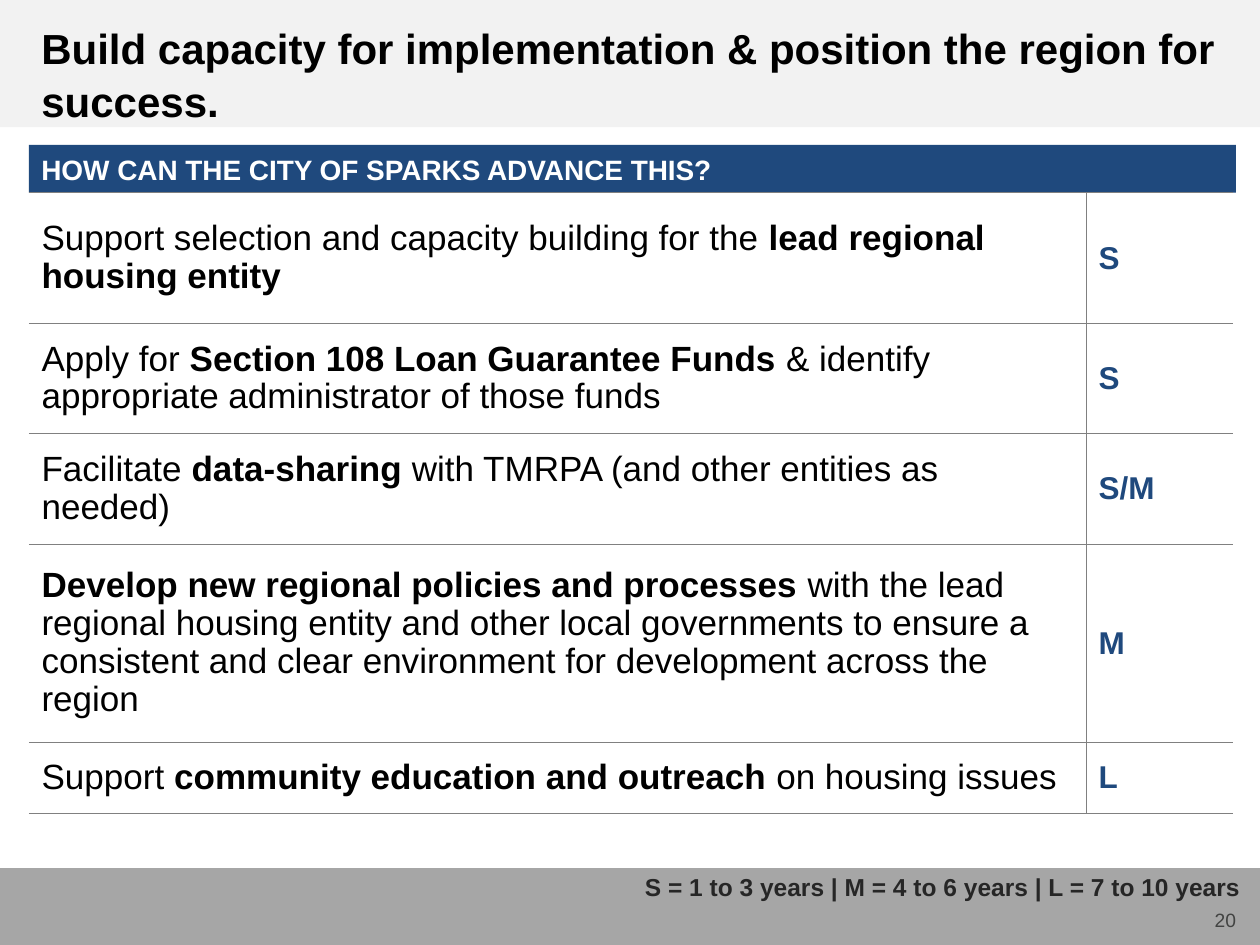
import pptx
import pptx.dml.color
import pptx.enum.shapes
import pptx.enum.text
import pptx.oxml
import pptx.oxml.ns
import pptx.util
from pptx.util import Inches

FONT = "Arial"
NAVY, BLACK, WHITE, RULE = "1F497D", "000000", "FFFFFF", "808080"
ANCHOR = pptx.enum.text.MSO_ANCHOR
ALIGN = pptx.enum.text.PP_ALIGN

COLUMN_WIDTHS = [8.39, 1.17]
# Row height, action as (text, bold) runs, time frame
ACTIONS = [
    (1.04, [("Support selection and capacity building for the ", False),
            ("lead regional housing entity", True)], "S"),
    (0.87, [("Apply for ", False), ("Section 108 Loan Guarantee Funds ", True),
            ("& identify appropriate administrator of those funds", False)], "S"),
    (0.88, [("Facilitate ", False), ("data-sharing", True),
            (" with TMRPA (and other entities as needed)", False)], "S/M"),
    (1.57, [("Develop new regional policies and processes ", True),
            ("with the lead regional housing entity and other local governments "
             "to ensure a consistent and clear environment for development "
             "across the region", False)], "M"),
    (0.57, [("Support ", False), ("community education and outreach ", True),
            ("on housing issues", False)], "L"),
]


def rgb(value):
    return pptx.dml.color.RGBColor.from_string(value)


def write_text(frame, runs, size, color, bold=True, align=ALIGN.LEFT, spacing=1.05):
    """Write a string, or a list of (text, bold) runs, as one paragraph."""
    if isinstance(runs, str):
        runs = [(runs, bold)]
    frame.word_wrap = True
    paragraph = frame.paragraphs[0]
    paragraph.alignment = align
    paragraph.line_spacing = spacing
    for text, is_bold in runs:
        run = paragraph.add_run()
        run.text = text
        run.font.name = FONT
        run.font.size = pptx.util.Pt(size)
        run.font.bold = is_bold
        run.font.color.rgb = rgb(color)


def add_band(slide, left, top, width, height, fill):
    shape = slide.shapes.add_shape(
        pptx.enum.shapes.MSO_SHAPE.RECTANGLE,
        Inches(left), Inches(top), Inches(width), Inches(height))
    shape.shadow.inherit = False
    shape.fill.solid()
    shape.fill.fore_color.rgb = rgb(fill)
    shape.line.fill.background()
    return shape


def add_text(slide, left, top, width, height, text, **text_format):
    box = slide.shapes.add_textbox(
        Inches(left), Inches(top), Inches(width), Inches(height))
    write_text(box.text_frame, text, **text_format)
    return box


def set_borders(cell, ruled_sides):
    """Rule the named sides and clear the others."""
    properties = cell._tc.get_or_add_tcPr()
    namespace = pptx.oxml.ns.nsdecls("a")
    for index, side in enumerate("LRTB"):
        if side in ruled_sides:
            fill = f'<a:solidFill><a:srgbClr val="{RULE}"/></a:solidFill>'
        else:
            fill = "<a:noFill/>"
        border = pptx.oxml.parse_xml(
            f'<a:ln{side} {namespace} w="6350">{fill}</a:ln{side}>')
        properties.insert(index, border)


def add_action_table(slide, left, top):
    heights = [height for height, _, _ in ACTIONS]
    frame = slide.shapes.add_table(
        len(ACTIONS), len(COLUMN_WIDTHS), Inches(left), Inches(top),
        Inches(sum(COLUMN_WIDTHS)), Inches(sum(heights)))
    table = frame.table
    table.first_row = False
    table.horz_banding = False
    for column, width in zip(table.columns, COLUMN_WIDTHS):
        column.width = Inches(width)
    for row, (height, action, time_frame) in zip(table.rows, ACTIONS):
        row.height = Inches(height)
        action_cell, time_cell = row.cells
        write_text(action_cell.text_frame, action, size=20, color=BLACK, spacing=0.97)
        write_text(time_cell.text_frame, time_frame, size=18, color=NAVY, spacing=1.0)
        for cell, sides in ((action_cell, "RTB"), (time_cell, "LTB")):
            cell.vertical_anchor = ANCHOR.MIDDLE
            cell.fill.background()
            set_borders(cell, sides)


def main():
    presentation = pptx.Presentation()
    presentation.slide_width = Inches(10)
    presentation.slide_height = Inches(7.5)
    slide = presentation.slides.add_slide(presentation.slide_layouts[6])

    # Footer and title bands
    add_band(slide, 0, 6.89, 10, 0.61, "A6A6A6")
    add_band(slide, 0, 0, 10, 1.01, "F2F2F2")

    # Title
    add_text(slide, 0.23, 0.11, 9.58, 0.91,
             "Build capacity for implementation & position the region for success.",
             size=24, color=BLACK)

    # Slide number
    number = add_text(slide, 7.48, 6.99, 2.33, 0.4, "20", size=11, color="424342",
                      bold=False, align=ALIGN.RIGHT, spacing=1.0).text_frame
    number.vertical_anchor = ANCHOR.BOTTOM
    number.margin_left = number.margin_right = 0
    number.margin_top = number.margin_bottom = 0

    # Table heading and table
    heading = add_band(slide, 0.23, 1.15, 9.58, 0.38, NAVY)
    heading.text_frame.vertical_anchor = ANCHOR.MIDDLE
    write_text(heading.text_frame, "HOW CAN THE CITY OF SPARKS ADVANCE THIS?",
               size=16, color=WHITE)
    add_action_table(slide, 0.23, 1.53)

    # Time frame key
    add_text(slide, 5.02, 6.86, 5.77, 0.34,
             "S = 1 to 3 years | M = 4 to 6 years | L = 7 to 10 years",
             size=14, color="262626")

    presentation.save("out.pptx")


if __name__ == "__main__":
    main()
